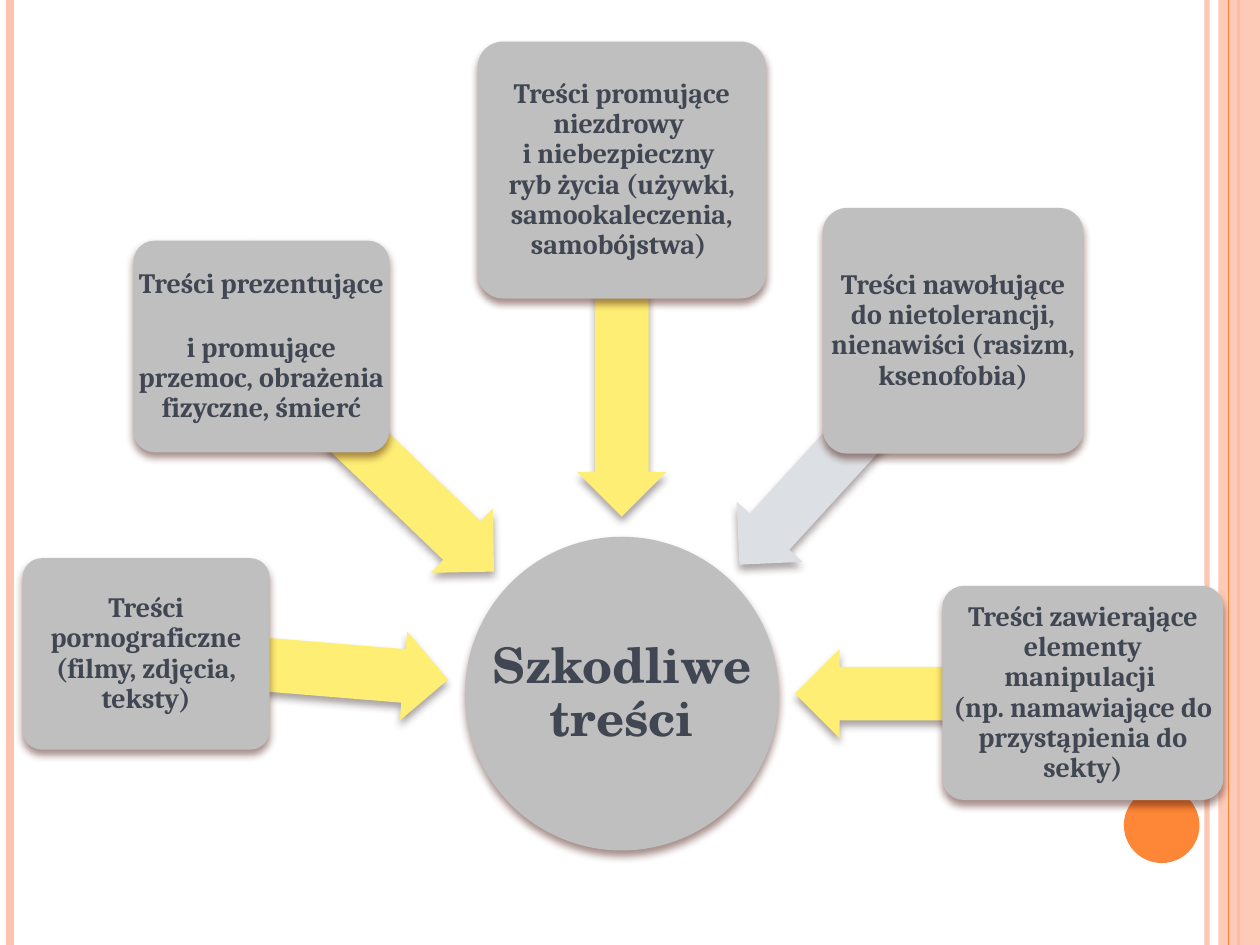
import pptx
import pptx.dml.color
import pptx.enum.shapes
import pptx.enum.text
import pptx.oxml
import pptx.oxml.ns
import pptx.util

RGBColor = pptx.dml.color.RGBColor
MSO_SHAPE = pptx.enum.shapes.MSO_SHAPE

PX = 9144  # EMU per px, 100 px to the inch
SLIDE_WIDTH, SLIDE_HEIGHT = 1000, 750

PEACH = RGBColor(0xFE, 0xC3, 0xAE)
ORANGE = RGBColor(0xFE, 0x86, 0x37)
GREY = RGBColor(0xBF, 0xBF, 0xBF)
YELLOW = RGBColor(0xFF, 0xEE, 0x74)
PALE_BLUE = RGBColor(0xDC, 0xDF, 0xE3)
SLATE = RGBColor(0x41, 0x47, 0x52)
CARD_SHADOW = RGBColor(0x40, 0x0E, 0x06)
ARROW_SHADOW = RGBColor(0x4B, 0x3C, 0x3C)

ARROW_HEIGHT = 71

# Left, width, colour and opacity percentage of the vertical rules
RULES = [
    (958, 3, PEACH, 93),
    (8, 4.5, PEACH, 100),
    (983, 1.5, ORANGE, 100),
]

# Card text and box, then its arrow's left, top, width, rotation and colour
CONTENT_TYPES = [
    ("Treści pornograficzne (filmy, zdjęcia, teksty)",
     (18, 443, 196, 152), (116, 494, 240, 184.7, YELLOW)),
    ("Treści prezentujące \ni promujące przemoc, obrażenia fizyczne, śmierć",
     (106, 191, 203, 168), (171, 329, 257, 223.9, YELLOW)),
    ("Treści promujące niezdrowy \ni niebezpieczny \n"
     "ryb życia (używki, samookaleczenia, samobójstwa) ",
     (379, 33, 229, 204), (356, 237, 275, 270, YELLOW)),
    ("Treści nawołujące do nietolerancji, nienawiści (rasizm, ksenofobia)",
     (653, 165, 207, 195), (546, 320, 251, 312.4, PALE_BLUE)),
    ("Treści zawierające elementy manipulacji \n"
     "(np. namawiające do przystąpienia do sekty)",
     (748, 465, 223, 170), (631, 515, 228, 0, YELLOW)),
]


def to_emu(*lengths):
    return [pptx.util.Emu(length * PX) for length in lengths]


def set_opacity(properties, percent):
    """Make the first solid colour inside the properties element translucent."""
    colour = properties.find(".//" + pptx.oxml.ns.qn("a:srgbClr"))
    alpha = colour.makeelement(pptx.oxml.ns.qn("a:alpha"), {"val": str(percent * 1000)})
    colour.append(alpha)


def add_soft_shadow(shape, colour):
    shape.shadow.inherit = False
    effects = shape._element.spPr.find(pptx.oxml.ns.qn("a:effectLst"))
    effects.append(pptx.oxml.parse_xml(
        f'<a:outerShdw {pptx.oxml.ns.nsdecls("a")} blurRad="57150" dist="38100" '
        f'dir="5400000" rotWithShape="0"><a:srgbClr val="{colour}">'
        '<a:alpha val="48000"/></a:srgbClr></a:outerShdw>'))


def write_text(frame, text, *, font, size, margin, colour=SLATE):
    frame.word_wrap = True
    frame.vertical_anchor = pptx.enum.text.MSO_ANCHOR.MIDDLE
    frame.margin_left = frame.margin_right = margin * PX
    frame.margin_top = frame.margin_bottom = margin * PX
    paragraph = frame.paragraphs[0]
    paragraph.alignment = pptx.enum.text.PP_ALIGN.CENTER
    paragraph.line_spacing = 0.9
    paragraph.text = text
    for run in paragraph.runs:
        run.font.name = font
        run.font.size = pptx.util.Pt(size)
        run.font.bold = True
        run.font.color.rgb = colour


class SlideBuilder:
    def __init__(self, slide):
        self.slide = slide

    def shape(self, kind, box, fill, shadow=None, group=None):
        parent = self.slide if group is None else group
        shape = parent.shapes.add_shape(kind, *to_emu(*box))
        shape.fill.solid()
        shape.fill.fore_color.rgb = fill
        shape.line.fill.background()
        if shadow:
            add_soft_shadow(shape, shadow)
        else:
            shape.shadow.inherit = False
        return shape

    def rule(self, x, width, colour, opacity=100):
        line = self.slide.shapes.add_connector(
            pptx.enum.shapes.MSO_CONNECTOR.STRAIGHT, *to_emu(x, 0, x, SLIDE_HEIGHT))
        line.line.width = pptx.util.Pt(width)
        line.line.color.rgb = colour
        properties = line._element.spPr
        if opacity < 100:
            set_opacity(properties, opacity)
        properties.append(properties.makeelement(pptx.oxml.ns.qn("a:effectLst"), {}))

    def band(self, box, colour, opacity):
        band = self.shape(MSO_SHAPE.RECTANGLE, box, colour)
        set_opacity(band._element.spPr, opacity)

    def arrow(self, left, top, width, rotation, colour):
        arrow = self.shape(MSO_SHAPE.LEFT_ARROW, (left, top, width, ARROW_HEIGHT),
                           colour, ARROW_SHADOW)
        arrow.adjustments[0] = 0.6
        arrow.adjustments[1] = 0.5
        arrow.rotation = rotation

    def labelled(self, kind, box, text, **text_format):
        """Group a grey shape with a label that may use its full bounding box."""
        group = self.slide.shapes.add_group_shape()
        shape = self.shape(kind, box, GREY, CARD_SHADOW, group)
        label = group.shapes.add_textbox(*to_emu(*box))
        write_text(label.text_frame, text, **text_format)
        return shape

    def card(self, text, box):
        card = self.labelled(MSO_SHAPE.ROUNDED_RECTANGLE, box, text,
                             font="Cambria", size=16, margin=3)
        card.adjustments[0] = 0.1

    def hub(self, text, box):
        self.labelled(MSO_SHAPE.OVAL, box, text,
                      font="TeX Gyre Schola", size=28, margin=1)


def main():
    presentation = pptx.Presentation()
    presentation.slide_width, presentation.slide_height = to_emu(SLIDE_WIDTH, SLIDE_HEIGHT)
    blank_layout = presentation.slide_layouts[6]
    builder = SlideBuilder(presentation.slides.add_slide(blank_layout))

    for rule in RULES:
        builder.rule(*rule)
    builder.band((967, 0, 33, SLIDE_HEIGHT), PEACH, 87)
    builder.rule(975, 0.75, ORANGE)
    builder.shape(MSO_SHAPE.OVAL, (892, 625, 60, 60), ORANGE)

    builder.hub("Szkodliwe treści", (369, 426, 249, 249))
    for text, box, arrow in CONTENT_TYPES:
        builder.arrow(*arrow)
        builder.card(text, box)

    presentation.save("out.pptx")


if __name__ == "__main__":
    main()
